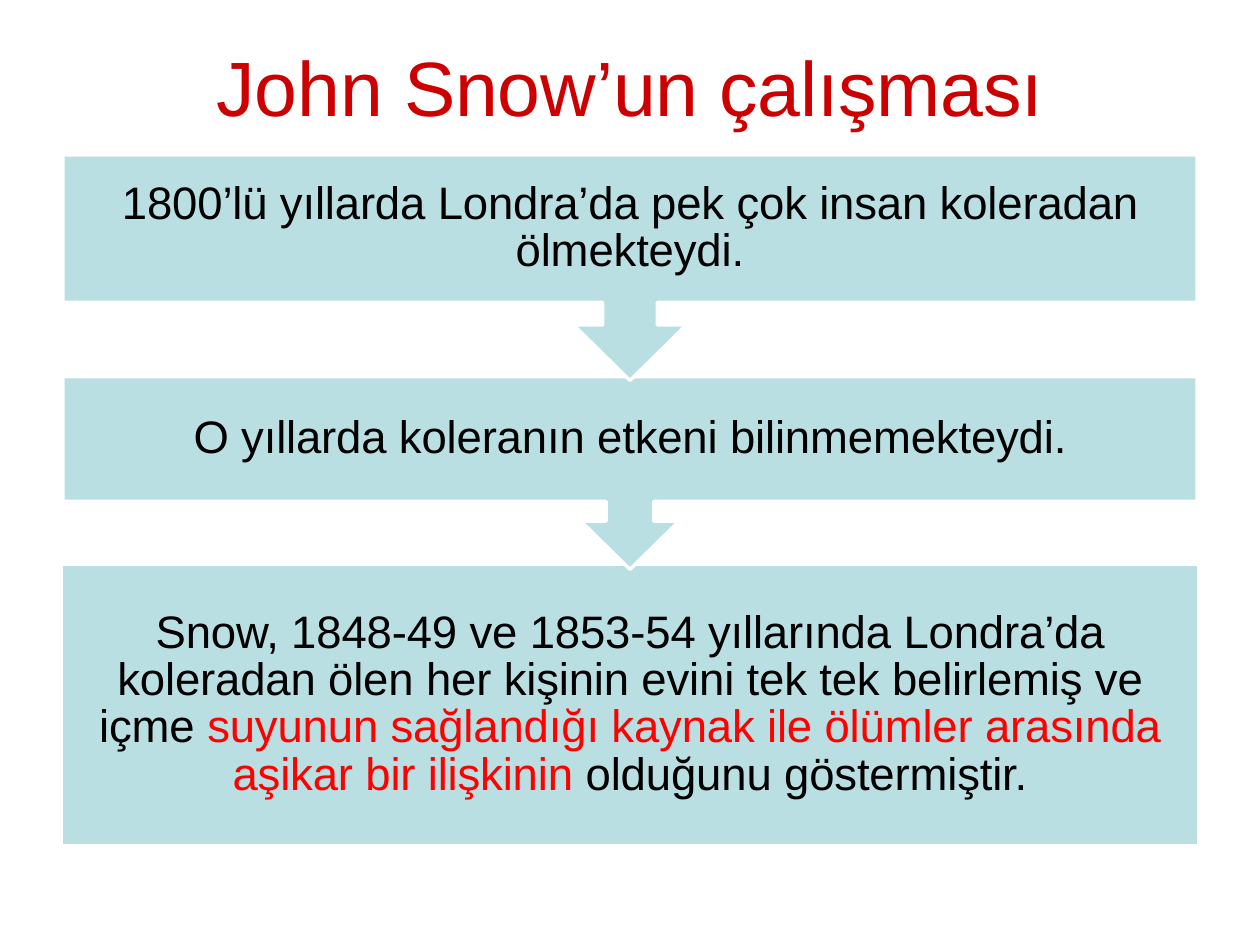
import pptx
import pptx.util
import pptx.dml.color
import pptx.enum.text

FONT = "Arial"
RED, TITLE_RED, BLACK = "FF0000", "CC0000", "000000"
PALE, WHITE = "BADFE2", "FFFFFF"

prs = pptx.Presentation()
prs.slide_width = pptx.util.Inches(10)
prs.slide_height = pptx.util.Inches(7.5)


def across(share):
    """Percent of the slide width."""
    return int(prs.slide_width * share / 100)


def down(share):
    """Percent of the slide height."""
    return int(prs.slide_height * share / 100)


def color(value):
    return pptx.dml.color.RGBColor.from_string(value)


def set_margins(tf, left=0, top=0, right=0, bottom=0):
    tf.margin_left, tf.margin_top = left, top
    tf.margin_right, tf.margin_bottom = right, bottom


def add_runs(p, parts, size):
    """Fill a centred paragraph with (text, colour) parts."""
    p.alignment = pptx.enum.text.PP_ALIGN.CENTER
    for text, value in parts:
        r = p.add_run()
        r.text = text
        r.font.name = FONT
        r.font.size = pptx.util.Pt(size)
        r.font.color.rgb = color(value)
        r.font._element.set("spc", "-10")


def add_title(s, left, top, width, height, text):
    sp = s.shapes.add_textbox(left, top, width, height)
    tf = sp.text_frame
    tf.word_wrap = False
    set_margins(tf, top=pptx.util.Pt(1.5))
    add_runs(tf.paragraphs[0], [(text, TITLE_RED)], 44)


def add_step(s, left, top, width, height, arrow, parts):
    """A box whose lower edge runs out into an arrow of the given depth."""
    right, bottom, middle = left + width, top + height, left + width // 2
    points = [(right, top), (right, bottom)]
    if arrow:
        stem, head, neck = (int(arrow * k) for k in (0.35, 0.72, 0.29))
        points += [
            (middle + stem, bottom), (middle + stem, bottom + neck),
            (middle + head, bottom + neck), (middle, bottom + arrow),
            (middle - head, bottom + neck), (middle - stem, bottom + neck),
            (middle - stem, bottom),
        ]
    points.append((left, bottom))
    builder = s.shapes.build_freeform(left, top)
    builder.add_line_segments(points, close=True)
    sp = builder.convert_to_shape()
    sp.shadow.inherit = False
    sp.fill.solid()
    sp.fill.fore_color.rgb = color(PALE)
    if arrow:
        sp.line.color.rgb = color(WHITE)
        sp.line.width = pptx.util.Pt(1.92)
    else:
        sp.line.fill.background()

    # Text stays within the box, above the arrow
    tf = sp.text_frame
    tf.word_wrap = True
    tf.vertical_anchor = pptx.enum.text.MSO_ANCHOR.MIDDLE
    set_margins(tf, left=across(2), right=across(2), bottom=arrow)
    p = tf.paragraphs[0]
    p.line_spacing = pptx.util.Pt(26.9)
    add_runs(p, parts, 26)


# Steps from top to bottom: top, height, arrow depth, text parts
STEPS = [
    (16.4, 15.6, 8.27,
     [("1800’lü yıllarda Londra’da pek çok insan koleradan ölmekteydi.", BLACK)]),
    (39.87, 13.2, 7.2,
     [("O yıllarda koleranın etkeni bilinmemekteydi.", BLACK)]),
    (59.87, 29.47, 0,
     [("Snow, 1848-49 ve 1853-54 yıllarında Londra’da koleradan ölen her "
       "kişinin evini tek tek belirlemiş ve içme ", BLACK),
      ("suyunun sağlandığı kaynak ile ölümler arasında aşikar bir ilişkinin ", RED),
      ("olduğunu göstermiştir.", BLACK)]),
]

s = prs.slides.add_slide(prs.slide_layouts[6])
add_title(s, across(16.9), down(3.87), across(66.2), down(10.13),
          "John Snow’un çalışması")

# Lowest step first, so that each arrow lies over the next box
for top, height, arrow, parts in reversed(STEPS):
    add_step(s, across(5), down(top), across(90), down(height), down(arrow), parts)

prs.save("out.pptx")
